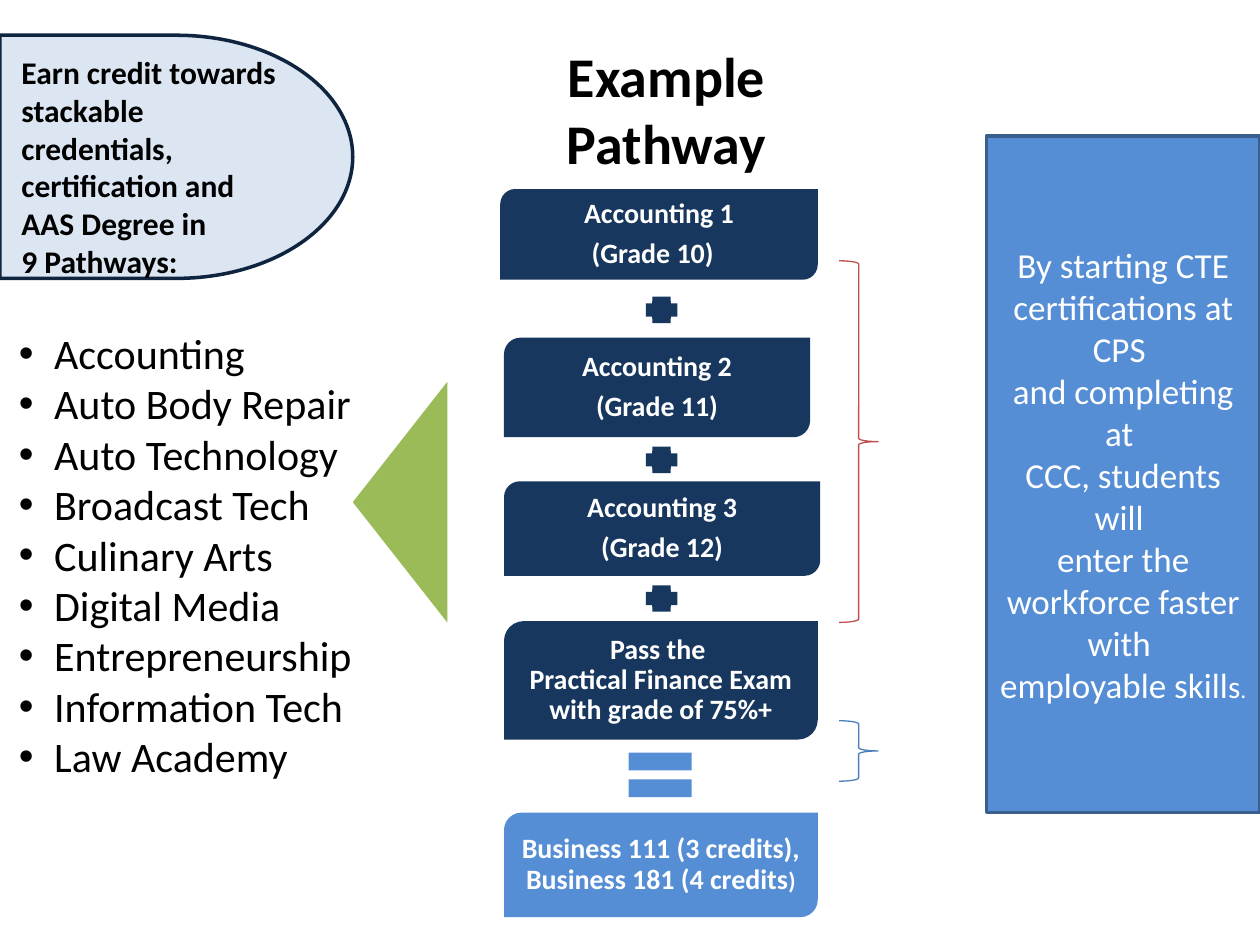
from lxml import etree
from pptx import Presentation
from pptx.dml.color import RGBColor
from pptx.enum.shapes import MSO_SHAPE
from pptx.enum.text import MSO_ANCHOR, PP_ALIGN
from pptx.oxml.ns import qn
from pptx.util import Inches, Pt

DELAY = MSO_SHAPE.FLOWCHART_DELAY
TRIANGLE = MSO_SHAPE.ISOSCELES_TRIANGLE
ROUNDED = MSO_SHAPE.ROUND_2_DIAG_RECTANGLE
PLUS = MSO_SHAPE.CROSS
EQUALS = MSO_SHAPE.MATH_EQUAL
BRACE = MSO_SHAPE.RIGHT_BRACE
RECTANGLE = MSO_SHAPE.RECTANGLE
MIDDLE, BOTTOM = MSO_ANCHOR.MIDDLE, MSO_ANCHOR.BOTTOM
CENTER = PP_ALIGN.CENTER

FONT = "Calibri"
COLORS = {
    "black": "000000", "white": "FFFFFF", "navy": "17375E", "blue": "558ED5",
    "pale": "DCE6F2", "outline": "0F243E", "green": "9BBB59",
    "red": "C0504D", "brace": "4B7EBC", "edge": "3A5F8C",
}
PATHWAYS = [
    "Accounting", "Auto Body Repair", "Auto Technology", "Broadcast Tech",
    "Culinary Arts", "Digital Media", "Entrepreneurship", "Information Tech",
    "Law Academy",
]
# Each step: box, paragraphs, fill
STEPS = [
    ((3.97, 1.5, 2.52, 0.72), ["Accounting 1", "(Grade 10)  "], "navy"),
    ((4, 2.68, 2.43, 0.79), ["Accounting 2", "(Grade 11)"], "navy"),
    ((4, 3.82, 2.51, 0.75), ["Accounting 3", "(Grade 12)"], "navy"),
    ((4, 4.93, 2.49, 0.94),
     ["Pass the \nPractical Finance Exam with grade of 75%+"], "navy"),
    ((4, 6.45, 2.49, 0.83),
     [[("Business 111 (3 credits),\nBusiness 181 (4 credits", 16), (")", 13.5)]],
     "blue"),
]
OUTCOME = [
    "By starting CTE certifications at CPS ",
    "and completing at ",
    "CCC, students will ",
    "enter the workforce faster with ",
    [("employable skill", 20), ("s", 18), (".", 13.5)],
]


def color(name):
    return RGBColor.from_string(COLORS[name])


def add_shape(page, kind, box, fill=None, line=None, width=0.75):
    shape = page.shapes.add_shape(kind, *map(Inches, box))
    shape.shadow.inherit = False
    if fill:
        shape.fill.solid()
        shape.fill.fore_color.rgb = color(fill)
    else:
        shape.fill.background()
    if line:
        shape.line.color.rgb = color(line)
        shape.line.width = Pt(width)
    else:
        shape.line.fill.background()
    return shape


def add_span(para, text, size, ink, bold):
    for index, part in enumerate(text.split("\n")):
        if index:
            para.add_line_break()
        span = para.add_run()
        span.text = part
        formats = {"name": FONT, "size": Pt(size), "bold": bold}
        for key, value in formats.items():
            setattr(span.font, key, value)
        span.font.color.rgb = color(ink)


def write(shape, paragraphs, size, ink, bold=False, inset=None, anchor=None, **layout):
    """Fill a shape; a paragraph is a string or a list of (text, size) pairs."""
    frame = shape.text_frame
    frame.word_wrap = True
    if anchor is not None:
        frame.vertical_anchor = anchor
    if inset is not None:
        for side in ("left", "top", "right", "bottom"):
            setattr(frame, f"margin_{side}", Inches(inset))
    for index, content in enumerate(paragraphs):
        para = frame.add_paragraph() if index else frame.paragraphs[0]
        for key, value in layout.items():
            setattr(para, key, value)
        spans = [(content, size)] if isinstance(content, str) else content
        for text, span_size in spans:
            add_span(para, text, span_size, ink, bold)
    return frame


def add_text(page, box, *args, **formats):
    return write(page.shapes.add_textbox(*map(Inches, box)), *args, **formats)


def add_bullet(para, indent):
    properties = para._p.get_or_add_pPr()
    properties.set("marL", str(Inches(indent)))
    properties.set("indent", str(-Inches(indent)))
    etree.SubElement(properties, qn("a:buFont")).set("typeface", "Arial")
    etree.SubElement(properties, qn("a:buChar")).set("char", "•")


def add_credit_banner(page, box):
    left, top, width, height = box
    add_shape(page, DELAY, box, "pale", "outline", 2)
    add_text(page, (left + 0.17, top + 0.12, 2.07, height - 0.11),
             ["Earn credit towards stackable credentials, certification and \n"
              "AAS Degree in \n9 Pathways:"],
             18, "black", bold=True, inset=0, anchor=BOTTOM)


def add_pathway_list(page, box):
    frame = add_text(page, box, PATHWAYS, 24, "black", inset=0)
    for para in frame.paragraphs:
        add_bullet(para, 0.28)


def add_pointer(page, box):
    """Place a triangle pointing left; the box is as seen after turning."""
    left, top, width, height = box
    shift = (height - width) / 2
    triangle = add_shape(page, TRIANGLE, (left - shift, top + shift, height, width), "green")
    triangle.rotation = 270


def add_plus(page, center, middle):
    for kind, width, height in ((PLUS, 0.25, 0.21), (RECTANGLE, 0.15, 0.14)):
        box = (center - width / 2, middle - height / 2, width, height)
        add_shape(page, kind, box, "navy")


def add_step_column(page, box):
    left, top, width, height = box
    add_text(page, (left, top, width, 1.18), ["Example Pathway"],
             32, "black", bold=True, alignment=CENTER)
    for step_box, paragraphs, fill in STEPS:
        write(add_shape(page, ROUNDED, step_box, fill), paragraphs, 16, "white",
              bold=True, inset=0.04, anchor=MIDDLE, alignment=CENTER,
              line_spacing=0.9, space_after=Pt(5.6))
    for middle in (2.46, 3.65, 4.75):
        add_plus(page, 5.25, middle)
    add_shape(page, EQUALS, (4.9, 5.85, 0.68, 0.6), "blue")


def add_braces(page, left, width):
    for top, height, line in ((2.07, 2.87, "red"), (5.72, 0.48, "brace")):
        add_shape(page, BRACE, (left, top, width, height), line=line)


def add_outcome_panel(page, box):
    panel = add_shape(page, RECTANGLE, box, "blue", "edge", 2)
    write(panel, OUTCOME, 20, "white", anchor=MIDDLE, alignment=CENTER)


def main():
    deck = Presentation()
    deck.slide_width, deck.slide_height = Inches(10), Inches(7.5)
    page = deck.slides.add_slide(deck.slide_layouts[6])
    add_credit_banner(page, (0, 0.28, 2.8, 1.93))
    add_pathway_list(page, (0.15, 2.6, 3.58, 3.64))
    add_pointer(page, (2.8, 3.03, 0.75, 1.91))
    add_step_column(page, (4, 0.28, 2.58, 7))
    add_braces(page, 6.66, 0.31)
    add_outcome_panel(page, (7.83, 1.08, 2.17, 5.37))
    deck.save("out.pptx")


if __name__ == "__main__":
    main()
